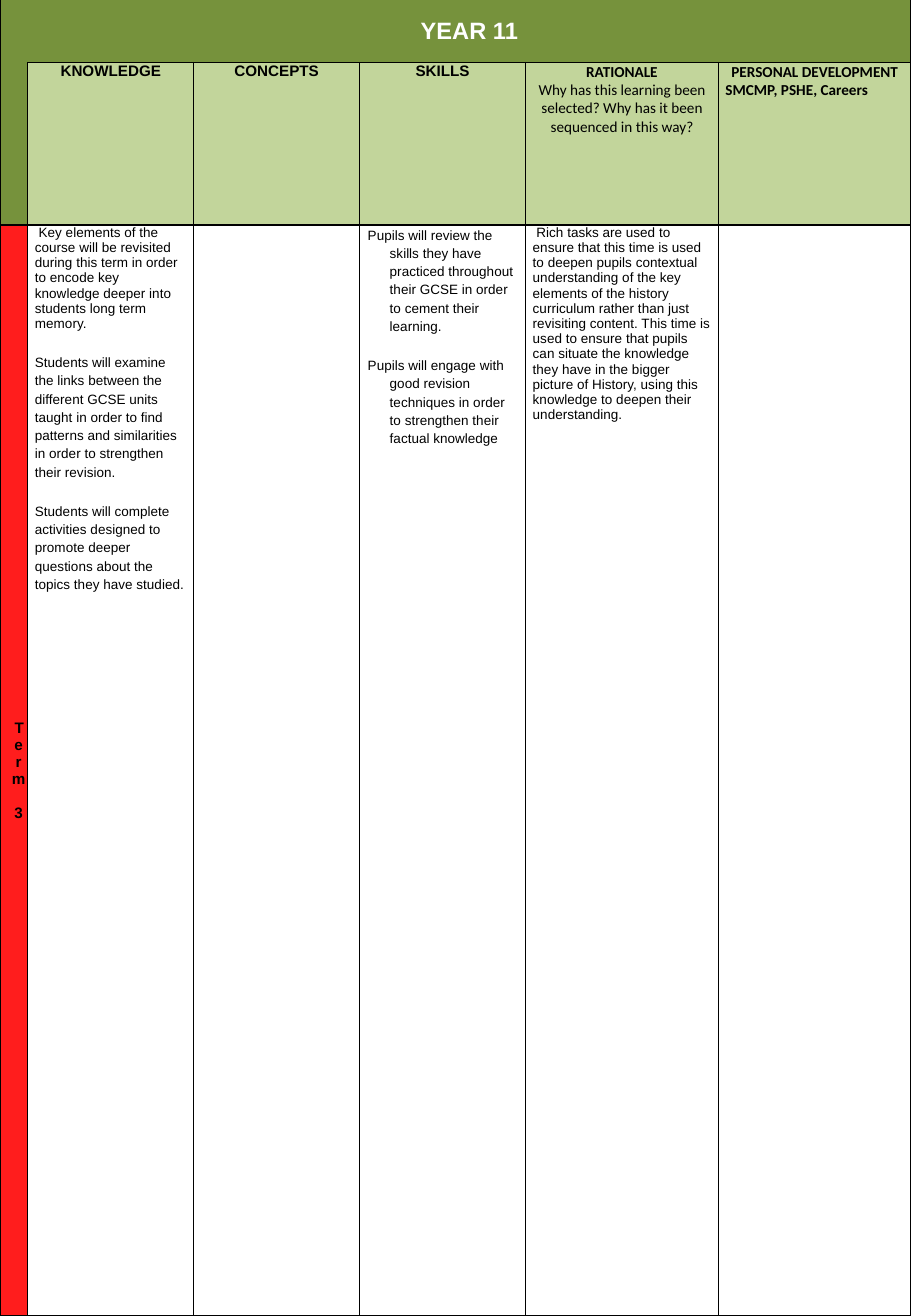
from lxml import etree
from pptx import Presentation
from pptx import util as u
from pptx.dml.color import RGBColor
from pptx.enum import text
from pptx.oxml.ns import qn

# Content: a paragraph is (text, options), a cell is a list of paragraphs
CENTRE = {"align": text.PP_ALIGN.CENTER}
HEADING = {**CENTRE, "size": 9, "bold": True}
CALIBRI = {**HEADING, "font": "Calibri"}
LOOSE = {"spacing": 1.2}
GAP = {**LOOSE, "before": 12.5}
HANGING = {"margin": 0.48, "indent": -0.46}

YEAR = [("YEAR 11", {**CENTRE, "size": 14, "bold": True, "color": "FFFFFF"})]
HEADINGS = [
    [("KNOWLEDGE", HEADING)],
    [("CONCEPTS", HEADING)],
    [("SKILLS", HEADING)],
    [("RATIONALE", CALIBRI),
     ("Why has this learning been selected? Why has it been sequenced in this way?",
      {**CALIBRI, "bold": False})],
    [("PERSONAL DEVELOPMENT", CALIBRI),
     ("SMCMP, PSHE, Careers", {**CALIBRI, "align": text.PP_ALIGN.LEFT})],
]
TERM = [("Term 3", {**HEADING, "margin": 0.2})]
TERM_PLAN = [
    [(" Key elements of the course will be revisited during this term in order to "
      "encode key knowledge deeper into students long term memory.", {}),
     ("Students will examine the links between the different GCSE units taught in order "
      "to find patterns and similarities in order to strengthen their revision.", GAP),
     ("Students will complete activities designed to promote deeper questions about the "
      "topics they have studied.", GAP)],
    [],
    [("Pupils will review the skills they have practiced throughout their GCSE in order "
      "to cement their learning.", {**LOOSE, **HANGING}),
     ("Pupils will engage with good revision techniques in order to strengthen their "
      "factual knowledge", {**GAP, **HANGING})],
    [(" Rich tasks are used to ensure that this time is used to deepen pupils contextual "
      "understanding of the key elements of the history curriculum rather than just "
      "revisiting content. This time is used to ensure that pupils can situate the "
      "knowledge they have in the bigger picture of History, using this knowledge to "
      "deepen their understanding.", {})],
    [],
]

# Sizes in centimetres
COLUMNS = [0.58] + [3.47] * 3 + [4.03] * 2
ROWS = [1.31, 3.39, 22.81]
DARK, LIGHT, RED, WHITE = "76923C", "C2D59B", "FF1D1D", "FFFFFF"


def rgb(value):
    return RGBColor.from_string(value)


def add_borders(cell, sides):
    properties = cell._tc.get_or_add_tcPr()
    for side in "LRTB":
        line = etree.SubElement(properties, qn(f"a:ln{side}"), w=str(u.Pt(1)))
        if side in sides:
            fill = etree.SubElement(line, qn("a:solidFill"))
            etree.SubElement(fill, qn("a:srgbClr"), val="000000")
        else:
            etree.SubElement(line, qn("a:noFill"))


def write_paragraph(para, words, style):
    para.alignment = style.get("align", text.PP_ALIGN.LEFT)
    para.line_spacing = style.get("spacing", 1.0)
    para.space_before = u.Pt(style.get("before", 0))
    indents = para._p.get_or_add_pPr()
    indents.set("marL", str(u.Cm(style.get("margin", 0))))
    indents.set("indent", str(u.Cm(style.get("indent", 0))))
    span = para.add_run()
    span.text = words
    span.font.name = style.get("font", "Arial")
    span.font.size = u.Pt(style.get("size", 8))
    span.font.bold = style.get("bold", False)
    span.font.color.rgb = rgb(style.get("color", "000000"))


def fill_cell(cell, paragraphs, color, sides="LRTB", middle=False):
    add_borders(cell, sides)
    cell.fill.solid()
    cell.fill.fore_color.rgb = rgb(color)
    cell.margin_left = cell.margin_right = u.Cm(0.15)
    cell.margin_top = cell.margin_bottom = 0
    cell.vertical_anchor = text.MSO_ANCHOR.MIDDLE if middle else text.MSO_ANCHOR.TOP
    frame = cell.text_frame
    for number, (words, style) in enumerate(paragraphs):
        para = frame.add_paragraph() if number else frame.paragraphs[0]
        write_paragraph(para, words, style)


# Page
deck = Presentation()
deck.slide_width, deck.slide_height = u.Cm(sum(COLUMNS)), u.Cm(sum(ROWS))
page = deck.slides.add_slide(deck.slide_layouts[6])

# Table grid
plan = page.shapes.add_table(len(ROWS), len(COLUMNS), 0, 0,
                             deck.slide_width, deck.slide_height).table
plan.first_row = plan.horz_banding = False
for column, width in zip(plan.columns, COLUMNS):
    column.width = u.Cm(width)
for row, height in zip(plan.rows, ROWS):
    row.height = u.Cm(height)

# Year band and its corner
plan.cell(0, 0).merge(plan.cell(1, 0))
plan.cell(0, 1).merge(plan.cell(0, 5))
fill_cell(plan.cell(0, 0), [], DARK, "LB")
fill_cell(plan.cell(0, 1), YEAR, DARK, "RB", middle=True)

# Headings and the term's plan
fill_cell(plan.cell(2, 0), TERM, RED, middle=True)
for row, color, entries in ((1, LIGHT, HEADINGS), (2, WHITE, TERM_PLAN)):
    for column, paragraphs in enumerate(entries, start=1):
        fill_cell(plan.cell(row, column), paragraphs, color)

deck.save("out.pptx")
